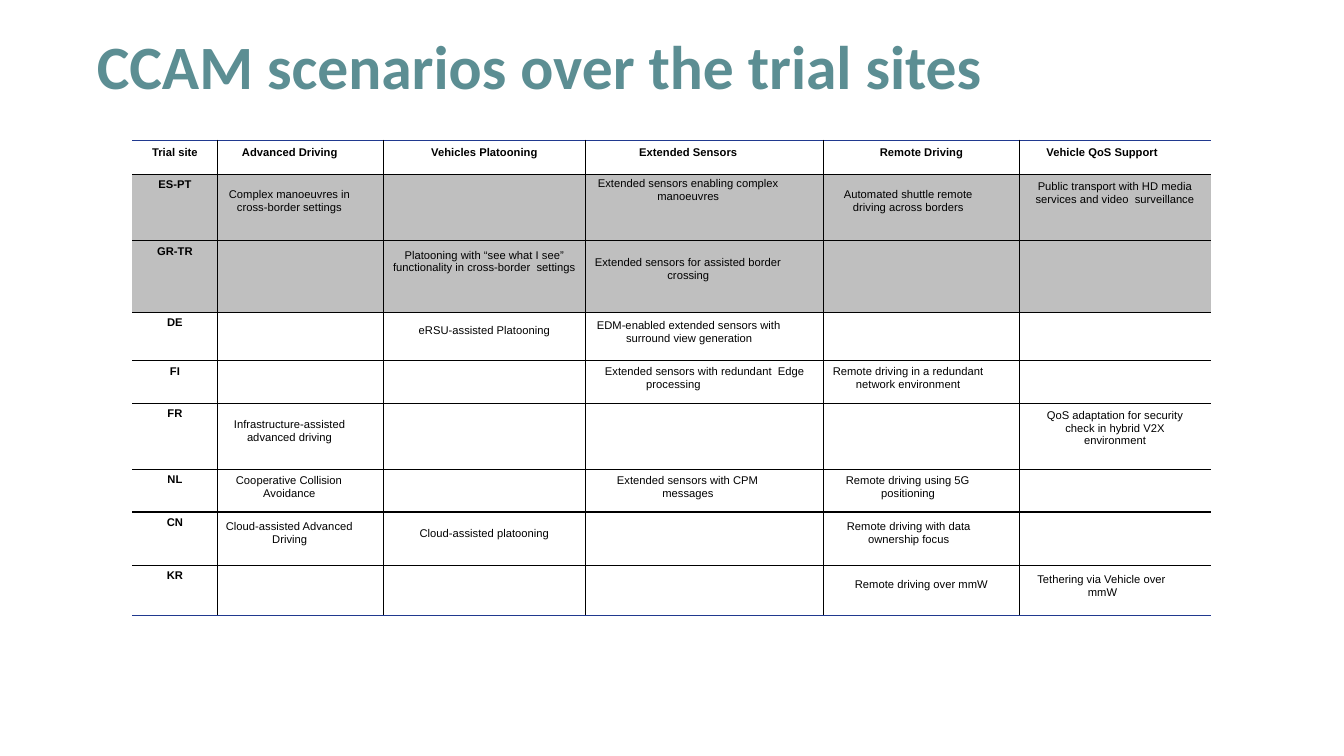
from dataclasses import dataclass

from lxml import etree
from pptx import Presentation
from pptx import util as u
from pptx.dml.color import RGBColor
from pptx.enum import text
from pptx.oxml.ns import qn


@dataclass(frozen=True)
class Theme:
    title_color: str = "5C8E93"
    ink: str = "000000"
    navy: str = "20398F"
    shade: str = "BFBFBF"
    title_font: str = "Calibri"
    table_font: str = "Arial"
    title_size: float = 44
    table_size: float = 8
    line_pitch: float = 9.4
    border: float = 1


THEME = Theme()
COLUMN_WIDTHS = [0.85, 1.64, 2.01, 2.36, 1.94, 1.9]
ROW_HEIGHTS = [0.34, 0.66, 0.71, 0.48, 0.42, 0.66, 0.42, 0.53, 0.5]
SITES = ["ES-PT", "GR-TR", "DE", "FI", "FR", "NL", "CN", "KR"]
SHADED_SITES = ["ES-PT", "GR-TR"]

# Each entry: text, top inset, then left margin and first-line indent;
# entries without a margin are centred.
HEADINGS = [
    ("Trial site", 0.06),
    ("Advanced Driving", 0.06, 0.24, 0),
    ("Vehicles Platooning", 0.06),
    ("Extended Sensors", 0.06, 0.53, 0),
    ("Remote Driving", 0.06),
    ("Vehicle QoS Support", 0.06, 0.27, 0),
]

# Scenarios by trial site and table column
SCENARIOS = {
    ("ES-PT", 1): ("Complex manoeuvres in\vcross-border settings", 0.13, 0.19, -0.08),
    ("ES-PT", 3): ("Extended sensors enabling complex\vmanoeuvres", 0.02, 0.71, -0.59),
    ("ES-PT", 4): ("Automated shuttle remote\vdriving across borders", 0.13, 0.29, -0.09),
    ("ES-PT", 5): ("Public transport with HD media\vservices and video  surveillance", 0.06),
    ("GR-TR", 2): ("Platooning with “see what I see”\v"
                   "functionality in cross-border  settings", 0.08),
    ("GR-TR", 3): ("Extended sensors for assisted border\vcrossing", 0.15, 0.81, -0.72),
    ("DE", 2): ("eRSU-assisted Platooning", 0.12),
    ("DE", 3): ("EDM-enabled extended sensors with\vsurround view generation", 0.06, 0.4, -0.29),
    ("FI", 3): ("Extended sensors with redundant  Edge\vprocessing", 0.04, 0.6, -0.41),
    ("FI", 4): ("Remote driving in a redundant\vnetwork environment", 0.04, 0.32, -0.23),
    ("FR", 1): ("Infrastructure-assisted\vadvanced driving", 0.14, 0.29, -0.13),
    ("FR", 5): ("QoS adaptation for security\vcheck in hybrid V2X\venvironment", 0.06),
    ("NL", 1): ("Cooperative Collision\vAvoidance", 0.04, 0.45, -0.27),
    ("NL", 3): ("Extended sensors with CPM\vmessages", 0.04, 0.76, -0.45),
    ("NL", 4): ("Remote driving using 5G\vpositioning", 0.04, 0.57, -0.35),
    ("CN", 1): ("Cloud-assisted Advanced\vDriving", 0.08, 0.54, -0.46),
    ("CN", 2): ("Cloud-assisted platooning", 0.15),
    ("CN", 4): ("Remote driving with data\vownership focus", 0.08, 0.44, -0.21),
    ("KR", 4): ("Remote driving over mmW", 0.13),
    ("KR", 5): ("Tethering via Vehicle over\vmmW", 0.07, 0.68, -0.5),
}


def write(frame, words, *, font, size, color, bold=False, align=text.PP_ALIGN.LEFT,
          spacing=None, margin=0, indent=0):
    """Fill a text frame with one formatted paragraph."""
    paragraph = frame.paragraphs[0]
    paragraph.text = words
    paragraph.alignment = align
    paragraph.line_spacing = spacing
    properties = paragraph._p.get_or_add_pPr()
    properties.set("marL", str(u.Inches(margin)))
    properties.set("indent", str(u.Inches(indent)))
    for style in [paragraph.font] + [run.font for run in paragraph.runs]:
        style.name, style.size, style.bold = font, u.Pt(size), bold
        style.color.rgb = RGBColor.from_string(color)


def add_title(slide, words):
    title = slide.shapes.title
    title.left, title.top = u.Inches(0.96), u.Inches(0.39)
    title.width, title.height = u.Inches(10.91), u.Inches(0.76)
    frame = title.text_frame
    frame.margin_left = frame.margin_top = frame.margin_right = frame.margin_bottom = 0
    frame.vertical_anchor = text.MSO_ANCHOR.TOP
    frame.auto_size = text.MSO_AUTO_SIZE.NONE
    write(frame, words, font=THEME.title_font, size=THEME.title_size,
          color=THEME.title_color, bold=True, spacing=0.85)


def set_borders(cell, edges):
    """Draw the given edges; edges maps a side tag to a colour."""
    properties = cell._tc.get_or_add_tcPr()
    for position, (side, color) in enumerate(edges.items()):
        line = etree.Element(qn(f"a:{side}"), w=str(u.Pt(THEME.border if color else 0)))
        if color:
            fill = etree.SubElement(line, qn("a:solidFill"))
            etree.SubElement(fill, qn("a:srgbClr"), val=color)
        else:
            etree.SubElement(line, qn("a:noFill"))
        properties.insert(position, line)


def fill_cell(cell, words="", top=0, margin=None, indent=0, *, bold=False, shaded=False):
    cell.margin_left = cell.margin_right = cell.margin_bottom = 0
    cell.margin_top = u.Inches(top)
    cell.vertical_anchor = text.MSO_ANCHOR.TOP
    if shaded:
        cell.fill.solid()
        cell.fill.fore_color.rgb = RGBColor.from_string(THEME.shade)
    else:
        cell.fill.background()
    centred = margin is None
    write(cell.text_frame, words, font=THEME.table_font, size=THEME.table_size,
          color=THEME.ink, bold=bold, margin=margin or 0, indent=indent,
          align=text.PP_ALIGN.CENTER if centred else text.PP_ALIGN.LEFT,
          spacing=None if centred else u.Pt(THEME.line_pitch))


def add_scenario_table(slide):
    last_row, last_column = len(ROW_HEIGHTS) - 1, len(COLUMN_WIDTHS) - 1
    table = slide.shapes.add_table(
        last_row + 1, last_column + 1, u.Inches(1.31), u.Inches(1.39),
        u.Inches(sum(COLUMN_WIDTHS)), u.Inches(sum(ROW_HEIGHTS))).table
    table.horz_banding = False
    for column, width in zip(table.columns, COLUMN_WIDTHS):
        column.width = u.Inches(width)
    for row, height in zip(table.rows, ROW_HEIGHTS):
        row.height = u.Inches(height)

    for r in range(last_row + 1):
        site = SITES[r - 1] if r else None
        for c in range(last_column + 1):
            if r == 0:
                content = HEADINGS[c]
            elif c == 0:
                content = (site, 0.04)
            else:
                content = SCENARIOS.get((site, c), ())
            cell = table.cell(r, c)
            fill_cell(cell, *content, bold=r == 0 or c == 0, shaded=site in SHADED_SITES)
            # Open at both sides, navy along the top and bottom
            set_borders(cell, {
                "lnL": THEME.ink if c else None,
                "lnR": THEME.ink if c < last_column else None,
                "lnT": THEME.ink if r else THEME.navy,
                "lnB": THEME.ink if r < last_row else THEME.navy,
            })


def main():
    deck = Presentation()
    deck.slide_width, deck.slide_height = u.Inches(13.33), u.Inches(7.5)
    slide = deck.slides.add_slide(deck.slide_layouts.get_by_name("Title Only"))
    add_title(slide, "CCAM scenarios over the trial sites")
    add_scenario_table(slide)
    deck.save("out.pptx")


if __name__ == "__main__":
    main()
